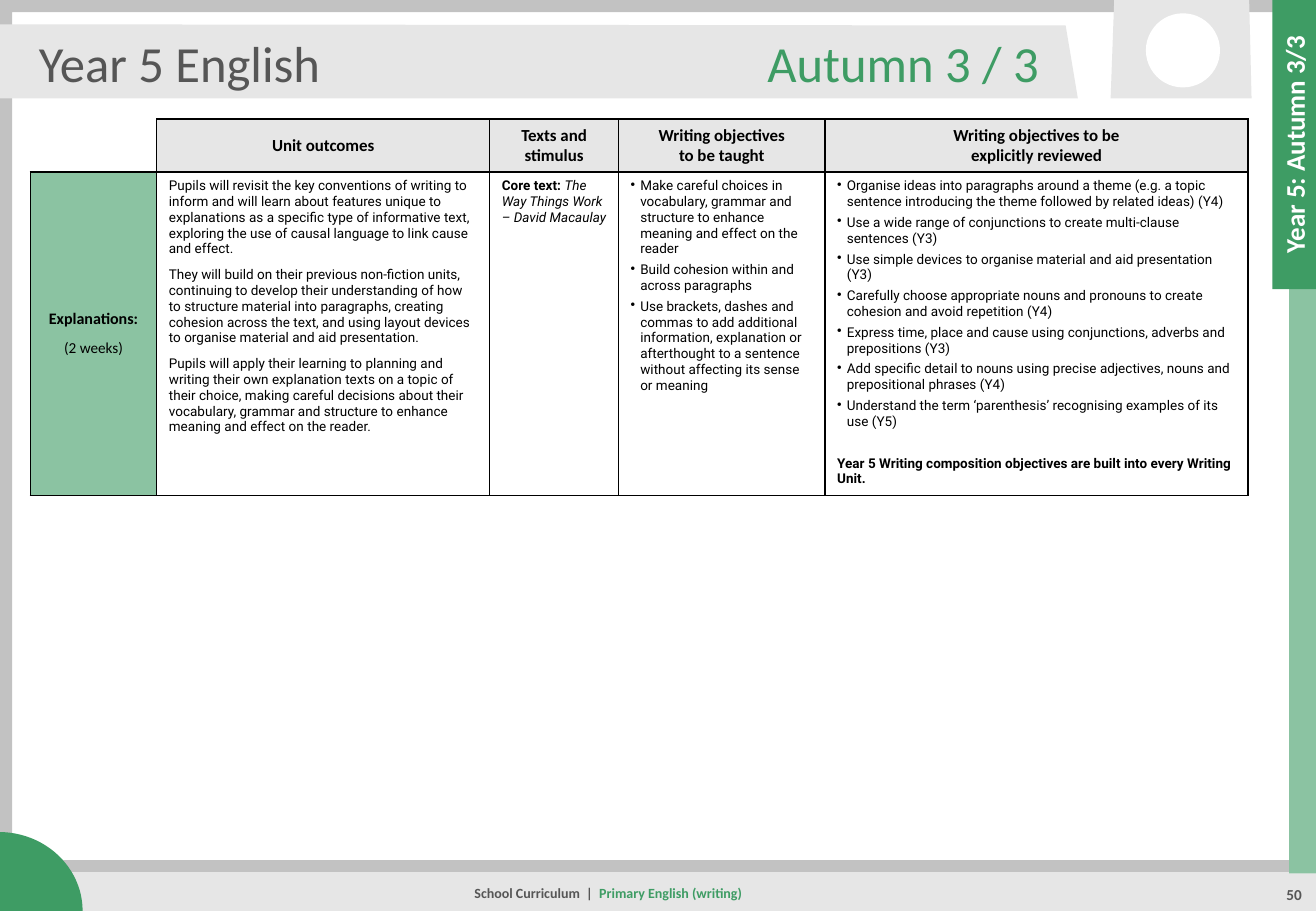
from lxml.etree import SubElement
from pptx import Presentation
from pptx.dml.color import RGBColor
from pptx.enum.shapes import MSO_CONNECTOR as Connector, MSO_SHAPE as Shape
from pptx.enum.text import MSO_ANCHOR as Anchor, MSO_AUTO_SIZE as AutoSize, PP_ALIGN as Align
from pptx.oxml.ns import qn
from pptx.util import Inches, Pt

GREEN, GREY, PALE, DARK = "3E9C64", "C2C2C2", "E6E6E6", "565656"
WHITE, BLACK = "FFFFFF", "000000"
TINT = 60

COLUMNS = [1.04, 2.74, 1.06, 1.7, 3.48]
ROWS = [0.43, 2.66]
HEADERS = ["Unit outcomes", "Texts and stimulus", "Writing objectives\vto be taught",
           "Writing objectives to be\vexplicitly reviewed"]
OUTCOMES = [
    "Pupils will revisit the key conventions of writing to inform and will learn about features "
    "unique to explanations as a specific type of informative text, exploring the use of causal "
    "language to link cause and effect.",
    "They will build on their previous non-fiction units, continuing to develop their "
    "understanding of how to structure material into paragraphs, creating cohesion across the "
    "text, and using layout devices to organise material and aid presentation.",
    "Pupils will apply their learning to planning and writing their own explanation texts on a "
    "topic of their choice, making careful decisions about their vocabulary, grammar and "
    "structure to enhance meaning and effect on the reader.",
]
TAUGHT = [
    "Make careful choices in vocabulary, grammar and structure to enhance meaning and effect on "
    "the reader",
    "Build cohesion within and across paragraphs",
    "Use brackets, dashes and commas to add additional information, explanation or afterthought "
    "to a sentence without affecting its sense or meaning",
]
REVIEWED = [
    "Organise ideas into paragraphs around a theme (e.g. a topic sentence introducing the theme "
    "followed by related ideas) (Y4)",
    "Use a wide range of conjunctions to create multi-clause sentences (Y3)",
    "Use simple devices to organise material and aid presentation (Y3)",
    "Carefully choose appropriate nouns and pronouns to create cohesion and avoid repetition (Y4)",
    "Express time, place and cause using conjunctions, adverbs and prepositions (Y3)",
    "Add specific detail to nouns using precise adjectives, nouns and prepositional phrases (Y4)",
    "Understand the term ‘parenthesis’ recognising examples of its use (Y5)",
]
REVIEW_NOTE = "Year 5 Writing composition objectives are built into every Writing Unit."


def rgb(color):
    return RGBColor.from_string(color)


def paint(fill, color, alpha=100):
    fill.solid()
    fill.fore_color.rgb = rgb(color)
    if alpha < 100:
        tone = fill._xPr.find(qn("a:solidFill"))[0]
        SubElement(tone, qn("a:alpha"), val=str(alpha * 1000))


def finish(shape, color, alpha=100):
    paint(shape.fill, color, alpha)
    shape.line.fill.background()
    shape.shadow.inherit = False


def add_block(page, kind, bounds, color, alpha=100):
    finish(page.shapes.add_shape(kind, *map(Inches, bounds)), color, alpha)


def add_outline(page, contours, color):
    """Draw one filled shape from closed contours of (x, y) points."""
    contours = [[(Inches(x), Inches(y)) for x, y in contour] for contour in contours]
    builder = page.shapes.build_freeform(*contours[0][0])
    builder.add_line_segments(contours[0][1:])
    for contour in contours[1:]:
        builder.move_to(*contour[0])
        builder.add_line_segments(contour[1:])
    finish(builder.convert_to_shape(), color)


def style(span, size, color=BLACK, face="Calibri", bold=False, italic=False):
    font = span.font
    font.name, font.size, font.bold, font.italic = face, Pt(size), bold, italic
    font.color.rgb = rgb(color)


def write(para, spans, align=Align.LEFT, after=0, before=0):
    """Fill a paragraph from (text, style options) pairs."""
    para.text = spans[0][0]
    for text, _ in spans[1:]:
        para.add_run().text = text
    options = [spans[0][1]] * (len(para.runs) - len(spans)) + [look for _, look in spans]
    for span, look in zip(para.runs, options):
        style(span, **look)
    para.alignment = align
    para.space_before, para.space_after = Pt(before), Pt(after)


def add_para(frame, spans, **layout):
    para = frame.paragraphs[0] if not frame.text else frame.add_paragraph()
    write(para, spans, **layout)
    return para


def set_bullet(para, mark=None, indent=0.0):
    props = para._p.get_or_add_pPr()
    props.set("marL", str(Inches(indent)))
    props.set("indent", str(-Inches(indent)))
    if mark:
        SubElement(props, qn("a:buChar"), char=mark)
    else:
        SubElement(props, qn("a:buNone"))


def add_bullets(frame, lines, look):
    for line in lines:
        para = frame.paragraphs[0] if not frame.text else frame.add_paragraph()
        set_bullet(para, "•", 0.08)
        write(para, [(line, look)], after=3)


def place_text(box, bounds, spans, align, anchor=Anchor.MIDDLE, spacing=1.0):
    box.left, box.top, box.width, box.height = map(Inches, bounds)
    frame = box.text_frame
    frame.word_wrap, frame.auto_size = True, AutoSize.NONE
    frame.vertical_anchor = anchor
    if box.is_placeholder:
        set_bullet(frame.paragraphs[0])
        box.element.getparent().append(box.element)
    add_para(frame, spans, align=align).line_spacing = spacing


def add_label(page, bounds, spans, align, **layout):
    place_text(page.shapes.add_textbox(0, 0, 0, 0), bounds, spans, align, **layout)


def set_borders(cell, sides):
    props = cell._tc.get_or_add_tcPr()
    for side in "LRTB":
        line = SubElement(props, qn(f"a:ln{side}"), w=str(Pt(1)))
        if side in sides:
            tone = SubElement(line, qn("a:solidFill"))
            SubElement(tone, qn("a:srgbClr"), val=BLACK)
        else:
            SubElement(line, qn("a:noFill"))


def add_plan(page):
    holder = page.shapes.add_table(len(ROWS), len(COLUMNS), Inches(0.25), Inches(0.98),
                                   Inches(sum(COLUMNS)), Inches(sum(ROWS)))
    plan = holder.table
    plan.first_row = plan.horz_banding = False
    for column, width in zip(plan.columns, COLUMNS):
        column.width = Inches(width)
    for row, height in zip(plan.rows, ROWS):
        row.height = Inches(height)
    fills = [[WHITE] + [PALE] * 4, [GREEN] + [WHITE] * 4]
    for r, colors in enumerate(fills):
        for c, color in enumerate(colors):
            cell = plan.cell(r, c)
            set_borders(cell, "RB" if r == c == 0 else "LRTB")
            paint(cell.fill, color, TINT if color == GREEN else 100)

    for c, header in enumerate(HEADERS, 1):
        cell = plan.cell(0, c)
        cell.vertical_anchor = Anchor.MIDDLE
        if c > 1:
            cell.margin_left = cell.margin_right = Inches(0.04)
        add_para(cell.text_frame, [(header, dict(size=10, bold=True))],
                 align=Align.CENTER, after=3)
        for span in cell.text_frame.paragraphs[0].runs:
            style(span, 10, bold=True)

    plan.cell(1, 0).vertical_anchor = Anchor.MIDDLE
    unit, outcomes, texts, taught, reviewed = [plan.cell(1, c).text_frame for c in range(5)]
    add_para(unit, [("Explanations:", dict(size=9.5, bold=True))], align=Align.CENTER, after=6)
    add_para(unit, [("(2 weeks)", dict(size=9))], align=Align.CENTER, after=6)
    body = dict(size=8, face="Roboto")
    strong = dict(body, bold=True)
    for outcome in OUTCOMES:
        add_para(outcomes, [(outcome, body)], after=6)
    add_para(texts, [("Core text: ", strong),
                     ("The Way Things Work – David Macaulay", dict(body, italic=True))], after=3)
    add_bullets(taught, TAUGHT, body)
    add_bullets(reviewed, REVIEWED, body)
    add_para(reviewed, [(REVIEW_NOTE, strong)], before=12.4, after=3)


def add_backdrop(page):
    add_outline(page, [[(0, 0), (10.85, 0), (10.85, 7.5), (0, 7.5)],
                       [(0.1, 0.1), (0.1, 7.41), (10.73, 7.41), (10.73, 0.1)]], GREY)
    add_block(page, Shape.RECTANGLE, (0.32, 7.18, 10.53, 0.33), PALE)
    rule = page.shapes.add_connector(Connector.STRAIGHT, Inches(0.05), Inches(7.13),
                                     Inches(10.83), Inches(7.13))
    rule.line.color.rgb, rule.line.width = rgb(GREY), Pt(7)
    SubElement(rule.element.spPr, qn("a:effectLst"))
    add_block(page, Shape.ARC, (-0.7, 6.85, 1.38, 1.3), GREEN)
    add_outline(page, [[(-0.02, 0.2), (-0.01, 0.81), (8.87, 0.81), (8.77, 0.21)]], PALE)
    strip = (10.61, 0, 0.24, 7.19)
    add_block(page, Shape.RECTANGLE, strip, WHITE)
    add_block(page, Shape.RECTANGLE, strip, GREEN, TINT)
    add_block(page, Shape.RECTANGLE, (10.47, 0, 0.39, 2.38), GREEN)
    add_outline(page, [[(9.14, 0.81), (10.3, 0.81), (10.28, -0.01), (9.17, -0.01)]], PALE)
    add_block(page, Shape.OVAL, (9.43, 0.11, 0.61, 0.61), WHITE)


def main():
    deck = Presentation()
    deck.slide_width, deck.slide_height = Inches(10.83), Inches(7.5)
    page = deck.slides.add_slide(deck.slide_layouts[1])
    title, tab = page.placeholders
    add_backdrop(page)
    small = dict(size=8.3, bold=True)
    add_label(page, (2.05, 7.21, 5.91, 0.3),
              [("School Curriculum  |  ", dict(small, color=DARK)),
               ("Primary English (writing)", dict(small, color=GREEN))],
              Align.CENTER, spacing=0.9)
    add_label(page, (10.33, 7.21, 0.64, 0.28), [("50", dict(size=9, color=DARK, bold=True))],
              Align.CENTER, anchor=Anchor.TOP, spacing=1.2)
    add_plan(page)
    place_text(tab, (9.46, 1.02, 2.38, 0.34),
               [("Year 5: Autumn 3/3", dict(size=16, color=WHITE, bold=True))], Align.CENTER)
    tab.rotation = 270
    place_text(title, (0.22, 0.26, 3.21, 0.5),
               [("Year 5 English", dict(size=30, color=DARK))], Align.LEFT)
    add_label(page, (5.28, 0.26, 3.37, 0.5),
              [("Autumn 3 / 3", dict(size=30, color=GREEN))], Align.RIGHT)
    deck.save("out.pptx")


if __name__ == "__main__":
    main()
